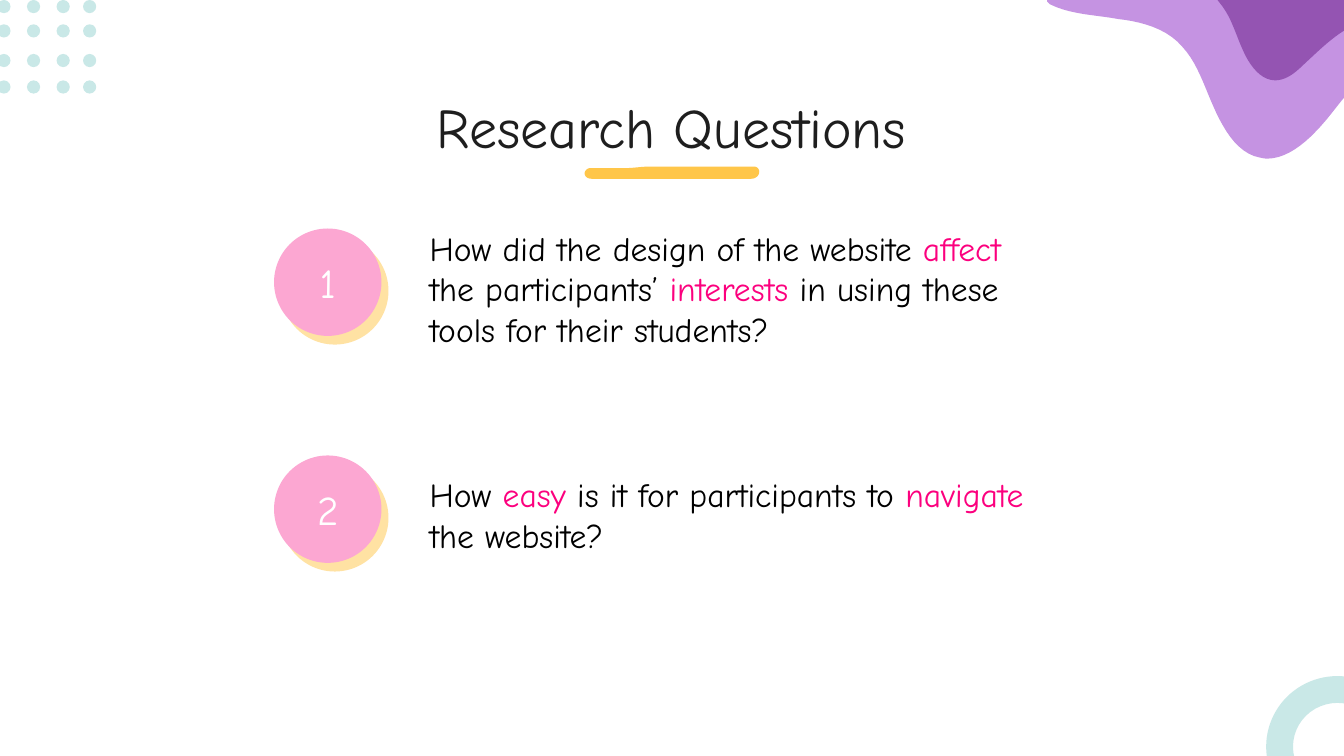
from dataclasses import dataclass
from itertools import product

import pptx
import pptx.dml.color
import pptx.enum.shapes
import pptx.enum.text
import pptx.oxml
import pptx.oxml.ns
import pptx.util
from pptx.util import Cm

COLORS = {
    "ink": "1E1E1E", "black": "000000", "white": "FFFFFF", "accent": "FC007E",
    "pink": "FCA7D2", "yellow": "FFC649", "mint": "C9E8E7",
    "lilac": "C593E2", "purple": "9454B2",
}
FONT = "Comic Neue"
SHAPE = pptx.enum.shapes.MSO_SHAPE
ALIGN = pptx.enum.text.PP_ALIGN
ANCHOR = pptx.enum.text.MSO_ANCHOR
CURVE_STEPS = 10

Point = tuple[float, float]
Box = tuple[float, float, float, float]


@dataclass
class Outline:
    """Closed outline in cm; a step of one point is a line, of three a Bezier curve."""
    color: str
    start: Point
    steps: list[tuple[Point, ...]]


@dataclass
class Question:
    number: str
    badge_top: float
    box: Box
    runs: list[tuple[str, str]]


UNDERLINE = Outline("yellow", (13.59, 3.15), [
    ((12.27, 3.15),),
    ((12.12, 3.15), (11.96, 3.18), (11.81, 3.18)),
    ((11.15, 3.18),),
    ((11.1, 3.18), (11.05, 3.23), (11.05, 3.28)),
    ((11.05, 3.33), (11.1, 3.38), (11.18, 3.38)),
    ((14.2, 3.38),),
    ((14.28, 3.38), (14.35, 3.32), (14.35, 3.25)),
    ((14.35, 3.2), (14.32, 3.15), (14.25, 3.15)),
])
WAVES = [
    Outline("lilac", (19.79, 0), [
        ((25.4, 0),),
        ((25.4, 1.85),),
        ((25.25, 2.03), (25.1, 2.24), (24.94, 2.41)),
        ((24.66, 2.72), (24.31, 3), (23.95, 3)),
        ((23.88, 3), (23.77, 2.97), (23.7, 2.95)),
        ((23.34, 2.82), (23.11, 2.41), (22.94, 2.03)),
        ((22.76, 1.63), (22.63, 1.19), (22.35, 0.89)),
        ((22.05, 0.53), (21.56, 0.41), (21.13, 0.36)),
        ((20.7, 0.28), (20.24, 0.28), (19.84, 0.08)),
        ((19.79, 0.03),),
    ]),
    Outline("purple", (25.4, 0), [
        ((25.4, 0.58),),
        ((25.12, 0.76), (24.89, 0.99), (24.64, 1.22)),
        ((24.49, 1.37), (24.31, 1.52), (24.1, 1.52)),
        ((23.83, 1.52), (23.62, 1.24), (23.5, 0.97)),
        ((23.37, 0.69), (23.29, 0.38), (23.11, 0.13)),
        ((23.01, 0),),
    ]),
]
DOT_LEFTS = (-0.05, 0.51, 1.07, 1.57)
DOT_TOPS = (0, 0.46, 1.02, 1.52)
DOT_SIZE = 0.25
BADGE_LEFT, BADGE_SIZE = 5.18, 2.03

QUESTIONS = [
    Question("1", 4.32, (7.87, 4.27, 12.32, 2.36), [
        ("How did the design of the website ", "black"), ("affect", "accent"),
        (" the participants’ ", "black"), ("interests", "accent"),
        (" in using these tools for their students?", "black"),
    ]),
    Question("2", 8.61, (7.87, 8.25, 12.32, 2.95), [
        ("How ", "black"), ("easy", "accent"),
        (" is it for participants to ", "black"), ("navigate", "accent"),
        (" the website?", "black"),
    ]),
]


def rgb(name: str) -> pptx.dml.color.RGBColor:
    return pptx.dml.color.RGBColor.from_string(COLORS[name])


def paint(sp, color: str) -> None:
    sp.shadow.inherit = False
    sp.fill.solid()
    sp.fill.fore_color.rgb = rgb(color)
    sp.line.fill.background()


def add_preset(s, kind, box: Box, color: str):
    sp = s.shapes.add_shape(kind, *map(Cm, box))
    paint(sp, color)
    return sp


def curve_points(p0: Point, p1: Point, p2: Point, p3: Point) -> list[Point]:
    """Points along a cubic Bezier curve, without its start."""
    points = []
    for i in range(1, CURVE_STEPS + 1):
        t = i / CURVE_STEPS
        u = 1 - t
        weights = (u ** 3, 3 * u * u * t, 3 * u * t * t, t ** 3)
        points.append(tuple(sum(w * c for w, c in zip(weights, axis))
                            for axis in zip(p0, p1, p2, p3)))
    return points


def add_outline(s, outline: Outline) -> None:
    points = [outline.start]
    for step in outline.steps:
        points += step if len(step) == 1 else curve_points(points[-1], *step)
    first, *rest = [(Cm(x), Cm(y)) for x, y in points]
    builder = s.shapes.build_freeform(*first)
    builder.add_line_segments(rest, close=True)
    paint(builder.convert_to_shape(), outline.color)


def add_text(s, box: Box, runs: list[tuple[str, str]], size: float,
             align=ALIGN.LEFT, anchor=ANCHOR.MIDDLE) -> None:
    tf = s.shapes.add_textbox(*map(Cm, box)).text_frame
    frame_format = {"word_wrap": True, "vertical_anchor": anchor}
    frame_format |= {f"margin_{side}": Cm(0.25)
                     for side in ("left", "top", "right", "bottom")}
    for name, value in frame_format.items():
        setattr(tf, name, value)
    p = tf.paragraphs[0]
    p.alignment = align
    for text, color in runs:
        r = p.add_run()
        r.text = text
        for name, value in {"name": FONT, "size": pptx.util.Pt(size)}.items():
            setattr(r.font, name, value)
        r.font.color.rgb = rgb(color)


def add_offset_shadow(sp, color: str) -> None:
    """Give the shape a sharp, half-transparent shadow at its lower right."""
    effects = sp._element.spPr.find(pptx.oxml.ns.qn("a:effectLst"))
    effects.append(pptx.oxml.parse_xml(
        f'<a:outerShdw {pptx.oxml.ns.nsdecls("a")} blurRad="0" dist="{pptx.util.Pt(6)}"'
        f' dir="{51 * 60000}" algn="bl" rotWithShape="0">'
        f'<a:srgbClr val="{COLORS[color]}"><a:alpha val="50000"/></a:srgbClr>'
        '</a:outerShdw>'))


def add_question(s, question: Question) -> None:
    top = question.badge_top
    badge = add_preset(s, SHAPE.OVAL, (BADGE_LEFT, top, BADGE_SIZE, BADGE_SIZE), "pink")
    add_offset_shadow(badge, "yellow")
    add_text(s, (5.56, top + 0.53, 1.27, 0.97), [(question.number, "white")], 22,
             ALIGN.CENTER)
    add_text(s, question.box, question.runs, 18)


def main() -> None:
    prs = pptx.Presentation()
    prs.slide_width, prs.slide_height = Cm(25.4), Cm(14.29)
    s = prs.slides.add_slide(prs.slide_layouts[6])

    add_outline(s, UNDERLINE)
    for left, top in product(DOT_LEFTS, DOT_TOPS):
        add_preset(s, SHAPE.OVAL, (left, top, DOT_SIZE, DOT_SIZE), "mint")
    for wave in WAVES:
        add_outline(s, wave)
    ring = add_preset(s, SHAPE.DONUT, (23.93, 12.78, 2.69, 2.67), "mint")
    ring.adjustments[0] = 0.19

    add_text(s, (1.96, 1.5, 21.46, 1.6), [("Research Questions", "ink")], 30,
             ALIGN.CENTER, ANCHOR.TOP)
    for question in QUESTIONS:
        add_question(s, question)
    prs.save("out.pptx")


if __name__ == "__main__":
    main()
